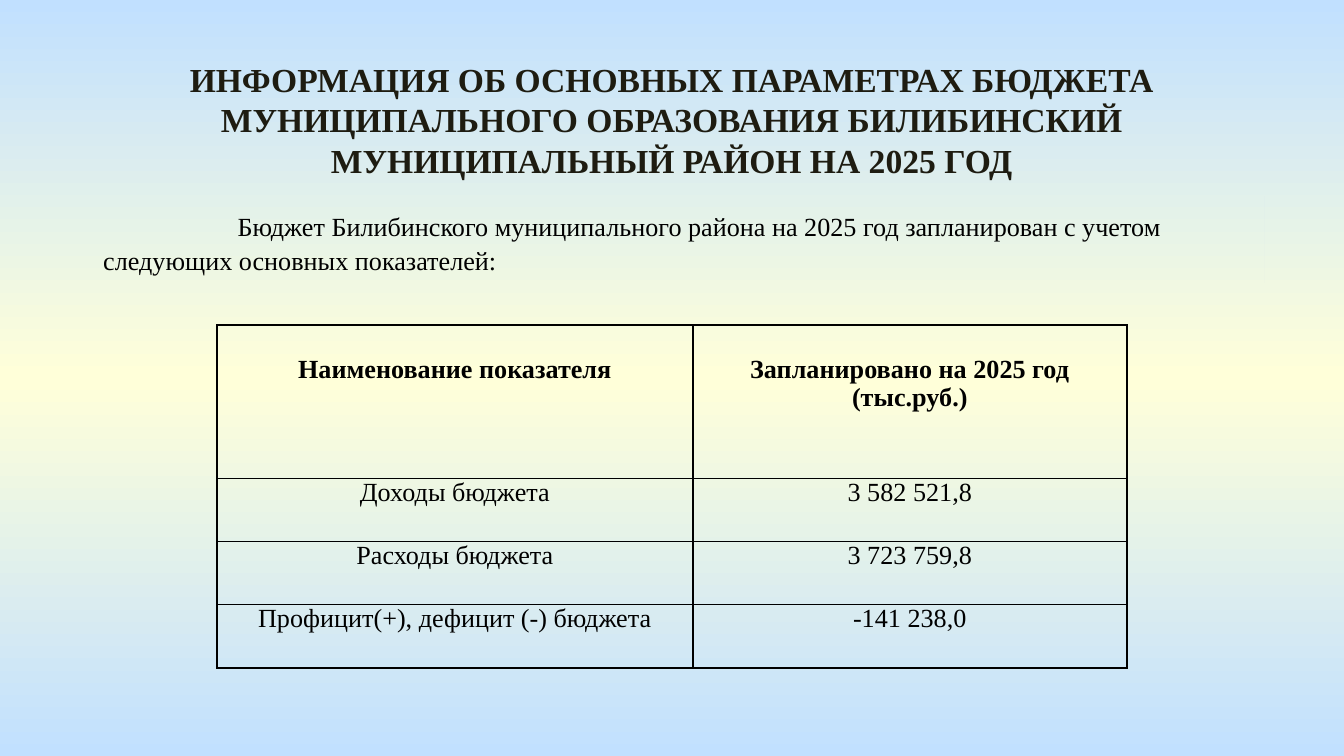
import copy

import pptx
import pptx.dml.color
import pptx.enum.shapes
import pptx.enum.text
import pptx.oxml
import pptx.oxml.ns
import pptx.util

Inches, Pt = pptx.util.Inches, pptx.util.Pt
RGB = pptx.dml.color.RGBColor.from_string
ALIGN = pptx.enum.text.PP_ALIGN
qn = pptx.oxml.ns.qn

# Content
HEADING = ("ИНФОРМАЦИЯ ОБ ОСНОВНЫХ ПАРАМЕТРАХ БЮДЖЕТА МУНИЦИПАЛЬНОГО "
           "ОБРАЗОВАНИЯ БИЛИБИНСКИЙ МУНИЦИПАЛЬНЫЙ РАЙОН НА 2025 ГОД")
INTRO = ("Бюджет Билибинского муниципального района на 2025 год запланирован "
         "с учетом следующих основных показателей:")
BUDGET = [
    ("Наименование показателя", "Запланировано на 2025 год (тыс.руб.)"),
    ("Доходы бюджета", "3 582 521,8"),
    ("Расходы бюджета", "3 723 759,8"),
    ("Профицит(+), дефицит (-) бюджета", "-141 238,0"),
]

# Theme and layout, lengths in inches
THEME = {
    "font": "Times New Roman",
    "heading": {"size": Pt(18), "bold": True, "color": "1E1C11"},
    "header": {"size": Pt(14), "bold": True, "color": "000000"},
    "body": {"size": Pt(14), "bold": False, "color": "000000"},
    "gradient": [(0, "C1E0FF"), (0.5, "FFFFD9"), (1, "C1E0FF")],
    "border": ("000000", Pt(1)),
}
SLIDE_W = 10
SLIDE_H = SLIDE_W * 9 / 16
HEADING_BOX = (0.35, 0.39, 9.3, 1.01)
INTRO_BOX = (0.67, 1.46, 8.74, 0.64)
INTRO_INDENT = 1
COLUMNS = (3.54, 3.23)
TABLE_LEFT, TABLE_TOP = (SLIDE_W - sum(COLUMNS)) / 2, 2.42
HEADER_H, ROW_H = 1.14, 0.47
HEADER_GAP = 0.22


def apply(target, values):
    for name, value in values.items():
        setattr(target, name, value)


def write(frame, text, style, **paragraph_format):
    frame.word_wrap = True
    frame.vertical_anchor = pptx.enum.text.MSO_ANCHOR.TOP
    paragraph = frame.paragraphs[0]
    apply(paragraph, paragraph_format)
    run = paragraph.add_run()
    run.text = text
    apply(run.font, {"name": THEME["font"], "size": style["size"], "bold": style["bold"]})
    run.font.color.rgb = RGB(style["color"])
    return paragraph


def fill_background(slide):
    """Fill the slide with the theme's three stops, running from top to bottom."""
    fill = slide.background.fill
    fill.gradient()
    fill.gradient_angle = 270
    stops = next(slide.element.iter(qn("a:gsLst")))
    stops.append(copy.deepcopy(stops[0]))
    for stop, (position, color) in zip(fill.gradient_stops, THEME["gradient"]):
        stop.position = position
        stop.color.rgb = RGB(color)


def draw_borders(cell):
    color, width = THEME["border"]
    properties = cell._tc.get_or_add_tcPr()
    for index, side in enumerate(("lnL", "lnR", "lnT", "lnB")):
        properties.insert(index, pptx.oxml.parse_xml(
            f'<a:{side} {pptx.oxml.ns.nsdecls("a")} w="{width}"><a:solidFill>'
            f'<a:srgbClr val="{color}"/></a:solidFill></a:{side}>'))


def main():
    deck = pptx.Presentation()
    deck.slide_width, deck.slide_height = Inches(SLIDE_W), Inches(SLIDE_H)
    slide = deck.slides.add_slide(deck.slide_layouts[6])
    fill_background(slide)

    # Introductory sentence with a first-line indent, filled with the slide background
    intro = slide.shapes.add_shape(
        pptx.enum.shapes.MSO_SHAPE.RECTANGLE, *map(Inches, INTRO_BOX))
    intro.shadow.inherit = False
    intro.line.fill.background()
    intro.element.remove(intro.element.find(qn("p:style")))
    intro.element.set("useBgFill", "1")
    intro.text_frame.margin_top = Inches(0.09)
    sentence = write(intro.text_frame, INTRO, THEME["body"],
                     alignment=ALIGN.LEFT, line_spacing=Pt(18))
    sentence._p.get_or_add_pPr().set("indent", str(Inches(INTRO_INDENT)))

    # Heading
    heading = slide.shapes.add_textbox(*map(Inches, HEADING_BOX))
    write(heading.text_frame, HEADING, THEME["heading"], alignment=ALIGN.CENTER)

    # Budget table
    heights = [HEADER_H] + [ROW_H] * (len(BUDGET) - 1)
    budget = slide.shapes.add_table(
        len(BUDGET), len(COLUMNS), Inches(TABLE_LEFT), Inches(TABLE_TOP),
        Inches(sum(COLUMNS)), Inches(sum(heights))).table
    apply(budget, {"first_row": False, "horz_banding": False})
    for column, width in zip(budget.columns, COLUMNS):
        column.width = Inches(width)
    for r, (row, height, entries) in enumerate(zip(budget.rows, heights, BUDGET)):
        row.height = Inches(height)
        for cell, entry in zip(row.cells, entries):
            apply(cell, {"margin_left": Inches(0.07), "margin_right": Inches(0.07),
                         "margin_top": Inches(0 if r else HEADER_GAP),
                         "margin_bottom": 0})
            cell.fill.background()
            draw_borders(cell)
            write(cell.text_frame, entry, THEME["body" if r else "header"],
                  alignment=ALIGN.CENTER)

    deck.save("out.pptx")


if __name__ == "__main__":
    main()
